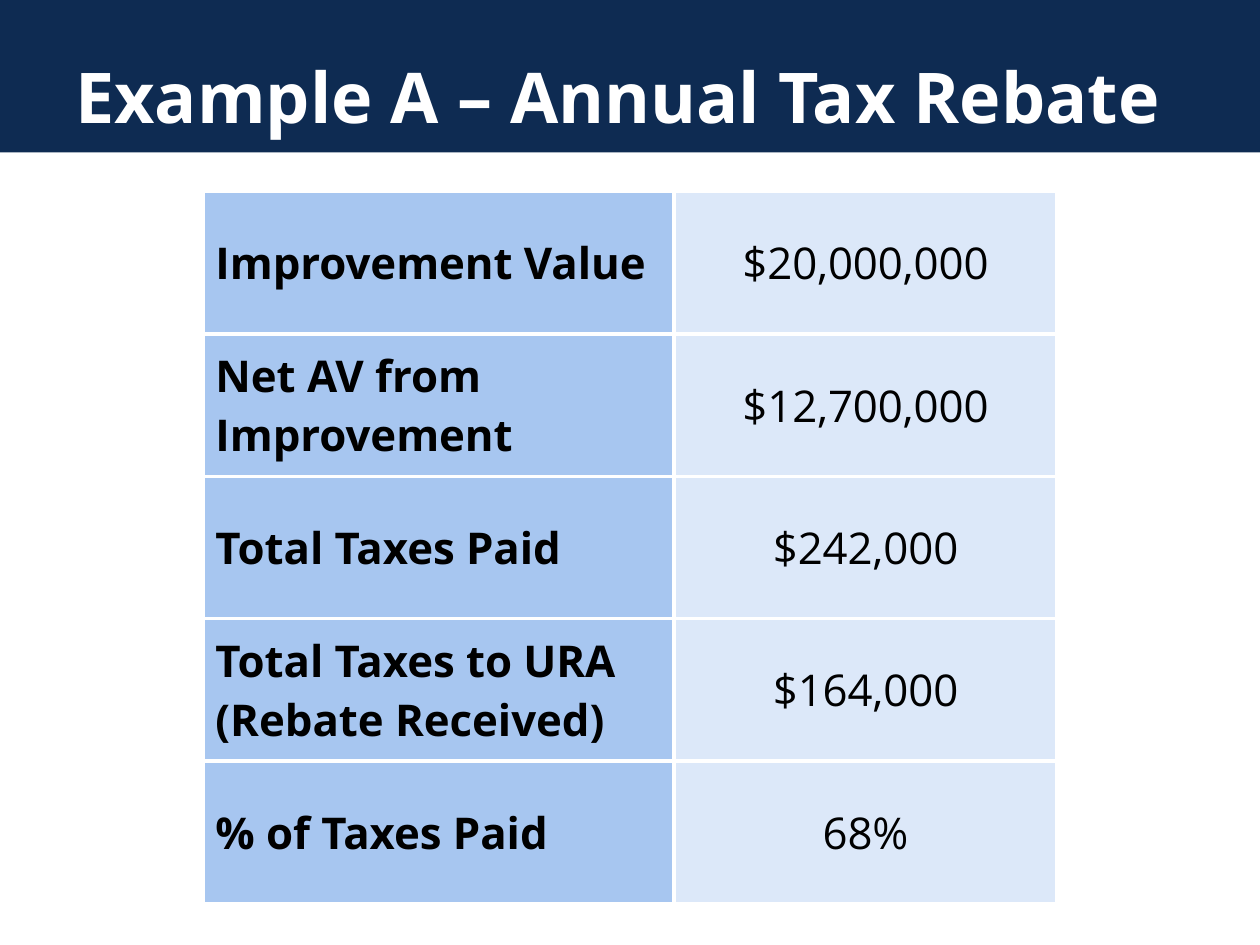
from dataclasses import dataclass
from typing import Any

from lxml.etree import SubElement
from pptx import Presentation
from pptx.dml.color import RGBColor
from pptx.enum.shapes import MSO_SHAPE
from pptx.enum.text import MSO_ANCHOR, PP_ALIGN
from pptx.oxml.ns import qn
from pptx.util import Inches, Pt

NAVY = RGBColor(0x0E, 0x2B, 0x52)
BLUE = RGBColor(0xA7, 0xC6, 0xF0)
PALE = RGBColor(0xDC, 0xE8, 0xF9)
WHITE = RGBColor(0xFF, 0xFF, 0xFF)
BLACK = RGBColor(0x00, 0x00, 0x00)

WIDTH, HEIGHT = 10, 7.5
BAND_HEIGHT = 1.21

TAX_ROWS = [
    ("Improvement Value", "$20,000,000"),
    ("Net AV from Improvement", "$12,700,000"),
    ("Total Taxes Paid", "$242,000"),
    ("Total Taxes to URA (Rebate Received)", "$164,000"),
    ("% of Taxes Paid", "68%"),
]


@dataclass
class Deck:
    s: Any
    font: str = "Open Sans"
    title_size: int = 40
    table_size: int = 25
    border: float = 2.25

    def add_text(self, tf, text, size, color, bold, align=PP_ALIGN.LEFT):
        p = tf.paragraphs[0]
        p.alignment = align
        r = p.add_run()
        r.text = text
        r.font.name = self.font
        r.font.size = Pt(size)
        r.font.bold = bold
        r.font.color.rgb = color

    def band(self, x, y, w, h, color):
        sp = self.s.shapes.add_shape(
            MSO_SHAPE.RECTANGLE, Inches(x), Inches(y), Inches(w), Inches(h))
        sp.shadow.inherit = False
        sp.fill.solid()
        sp.fill.fore_color.rgb = color
        sp.line.fill.background()

    def title(self, x, y, w, h, text):
        sp = self.s.shapes.add_textbox(Inches(x), Inches(y), Inches(w), Inches(h))
        tf = sp.text_frame
        tf.word_wrap = True
        tf.vertical_anchor = MSO_ANCHOR.MIDDLE
        self.add_text(tf, text, self.title_size, WHITE, True)

    def cell(self, cell, text, fill, bold, align):
        tcPr = cell._tc.get_or_add_tcPr()
        for side in ("a:lnL", "a:lnR", "a:lnT", "a:lnB"):
            ln = SubElement(tcPr, qn(side), w=str(Pt(self.border)))
            solid = SubElement(ln, qn("a:solidFill"))
            SubElement(solid, qn("a:srgbClr"), val=str(WHITE))
        cell.fill.solid()
        cell.fill.fore_color.rgb = fill
        cell.vertical_anchor = MSO_ANCHOR.MIDDLE
        self.add_text(cell.text_frame, text, self.table_size, BLACK, bold, align)

    def table(self, x, y, col_widths, row_height, rows):
        w, h = sum(col_widths), row_height * len(rows)
        table = self.s.shapes.add_table(
            len(rows), len(col_widths),
            Inches(x), Inches(y), Inches(w), Inches(h)).table
        for column, width in zip(table.columns, col_widths):
            column.width = Inches(width)
        for i, (label, value) in enumerate(rows):
            table.rows[i].height = Inches(row_height)
            self.cell(table.cell(i, 0), label, BLUE, True, PP_ALIGN.LEFT)
            self.cell(table.cell(i, 1), value, PALE, False, PP_ALIGN.CENTER)


def main():
    prs = Presentation()
    prs.slide_width, prs.slide_height = Inches(WIDTH), Inches(HEIGHT)
    deck = Deck(prs.slides.add_slide(prs.slide_layouts[6]))
    deck.band(0, 0, WIDTH, BAND_HEIGHT, NAVY)
    deck.title(WIDTH * 0.05, HEIGHT * 0.04, WIDTH * 0.9,
               BAND_HEIGHT - HEIGHT * 0.04, "Example A – Annual Tax Rebate")
    col_widths = (3.74, 3.04)
    deck.table((WIDTH - sum(col_widths)) / 2, 1.52, col_widths, 1.13, TAX_ROWS)
    prs.save("out.pptx")


if __name__ == "__main__":
    main()
